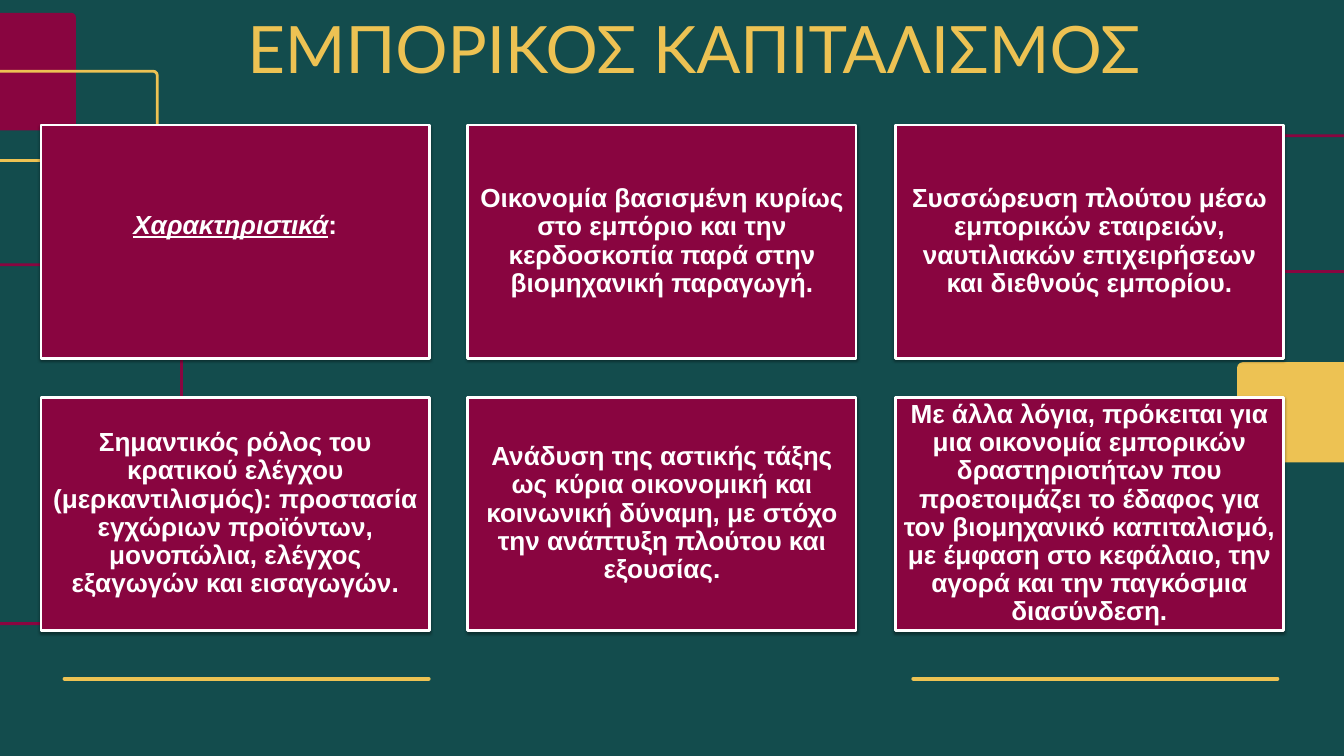
import pptx
import pptx.util
import pptx.dml.color
import pptx.enum.shapes
import pptx.enum.text
import pptx.oxml
import pptx.oxml.ns

PX = 9144  # one px is a hundredth of an inch
TEAL, WINE, GOLD, WHITE = "134C4D", "890540", "EDC253", "FFFFFF"
SHAPES = pptx.enum.shapes.MSO_SHAPE
NS = pptx.oxml.ns.nsdecls("a")


def color(hex_code):
    return pptx.dml.color.RGBColor.from_string(hex_code)


def add_panel(kind, box, fill=None, line=None):
    panel = slide.shapes.add_shape(kind, *[v * PX for v in box])
    panel.shadow.inherit = False
    if fill:
        panel.fill.solid()
        panel.fill.fore_color.rgb = color(fill)
    else:
        panel.fill.background()
    if line:
        panel.line.color.rgb = color(line)
        panel.line.width = pptx.util.Pt(3)
    else:
        panel.line.fill.background()
    return panel


deck = pptx.Presentation()
deck.slide_width, deck.slide_height = 2000 * PX, 1125 * PX
slide = deck.slides.add_slide(deck.slide_layouts[6])
slide.background.fill.solid()
slide.background.fill.fore_color.rgb = color(TEAL)

# Gold rules along the bottom
for left in (1359, 96):
    rule = slide.shapes.add_connector(
        pptx.enum.shapes.MSO_CONNECTOR.STRAIGHT,
        left * PX, 1010 * PX, (left + 542) * PX, 1010 * PX)
    rule.line.color.rgb = color(GOLD)
    rule.line.width = pptx.util.Pt(4)
    rule.line._get_or_add_ln().set("cap", "rnd")
    rule._element.spPr.append(pptx.oxml.parse_xml(f"<a:effectLst {NS}/>"))

# Rounded frames and blocks at the edges: box, corner radius, fill, line
decorations = [
    ((-120, 394, 390, 534), 5, None, WINE),
    ((1841, 539, 245, 149), 8, GOLD, None),
    ((-173, 19, 286, 175), 7, WINE, None),
    ((-83, 106, 317, 133), 6, None, GOLD),
    ((1754, 202, 477, 202), 4, None, WINE),
]
for box, radius, fill, line in decorations:
    block = add_panel(SHAPES.ROUNDED_RECTANGLE, box, fill, line)
    block.adjustments[0] = radius / min(box[2:])

# Title
title = slide.shapes.add_textbox(150 * PX, 15 * PX, 1790 * PX, 125 * PX).text_frame
title.word_wrap = True
title.vertical_anchor = pptx.enum.text.MSO_ANCHOR.MIDDLE
heading = title.paragraphs[0]
heading.text = "ΕΜΠΟΡΙΚΟΣ ΚΑΠΙΤΑΛΙΣΜΟΣ "
heading.alignment = pptx.enum.text.PP_ALIGN.CENTER
heading.line_spacing = 0.9
heading.font.name = "Lato"
heading.font.size = pptx.util.Pt(70)
heading.font.color.rgb = color(GOLD)

# Cards in a grid of three columns; the first one introduces the rest
features = [
    "",
    "Οικονομία βασισμένη κυρίως στο εμπόριο και την κερδοσκοπία παρά στην βιομηχανική παραγωγή.",
    "Συσσώρευση πλούτου μέσω εμπορικών εταιρειών, ναυτιλιακών επιχειρήσεων και διεθνούς εμπορίου.",
    "Σημαντικός ρόλος του κρατικού ελέγχου (μερκαντιλισμός): προστασία εγχώριων προϊόντων, "
    "μονοπώλια, ελέγχος εξαγωγών και εισαγωγών.",
    "Ανάδυση της αστικής τάξης ως κύρια οικονομική και κοινωνική δύναμη, με στόχο την ανάπτυξη "
    "πλούτου και εξουσίας.",
    "Με άλλα λόγια, πρόκειται για μια οικονομία εμπορικών δραστηριοτήτων που προετοιμάζει το "
    "έδαφος για τον βιομηχανικό καπιταλισμό, με έμφαση στο κεφάλαιο, την αγορά και την "
    "παγκόσμια διασύνδεση.",
]
for index, feature in enumerate(features):
    row, column = divmod(index, 3)
    box = (61 + column * 1271 // 2, 186 + row * 405, 578, 347)
    card = add_panel(SHAPES.RECTANGLE, box, WINE, WHITE)
    card._element.spPr.find(pptx.oxml.ns.qn("a:effectLst")).append(pptx.oxml.parse_xml(
        f'<a:outerShdw {NS} blurRad="40000" dist="20000" dir="5400000" rotWithShape="0">'
        '<a:srgbClr val="000000"><a:alpha val="38000"/></a:srgbClr></a:outerShdw>'))

    frame = card.text_frame
    frame.word_wrap = True
    frame.vertical_anchor = pptx.enum.text.MSO_ANCHOR.MIDDLE
    frame.margin_left = frame.margin_right = 12 * PX
    frame.margin_top = frame.margin_bottom = 12 * PX
    paragraph = frame.paragraphs[0]
    paragraph.alignment = pptx.enum.text.PP_ALIGN.CENTER
    paragraph.line_spacing = 0.9
    paragraph.font.name = "Arial"
    paragraph.font.size = pptx.util.Pt(28)
    paragraph.font.bold = True
    paragraph.font.color.rgb = color(WHITE)
    if feature:
        paragraph.add_run().text = feature
    else:
        label = paragraph.add_run()
        label.text = "Χαρακτηριστικά"
        label.font.italic = label.font.underline = True
        paragraph.add_run().text = ":"
        paragraph.add_line_break()

deck.save("out.pptx")
